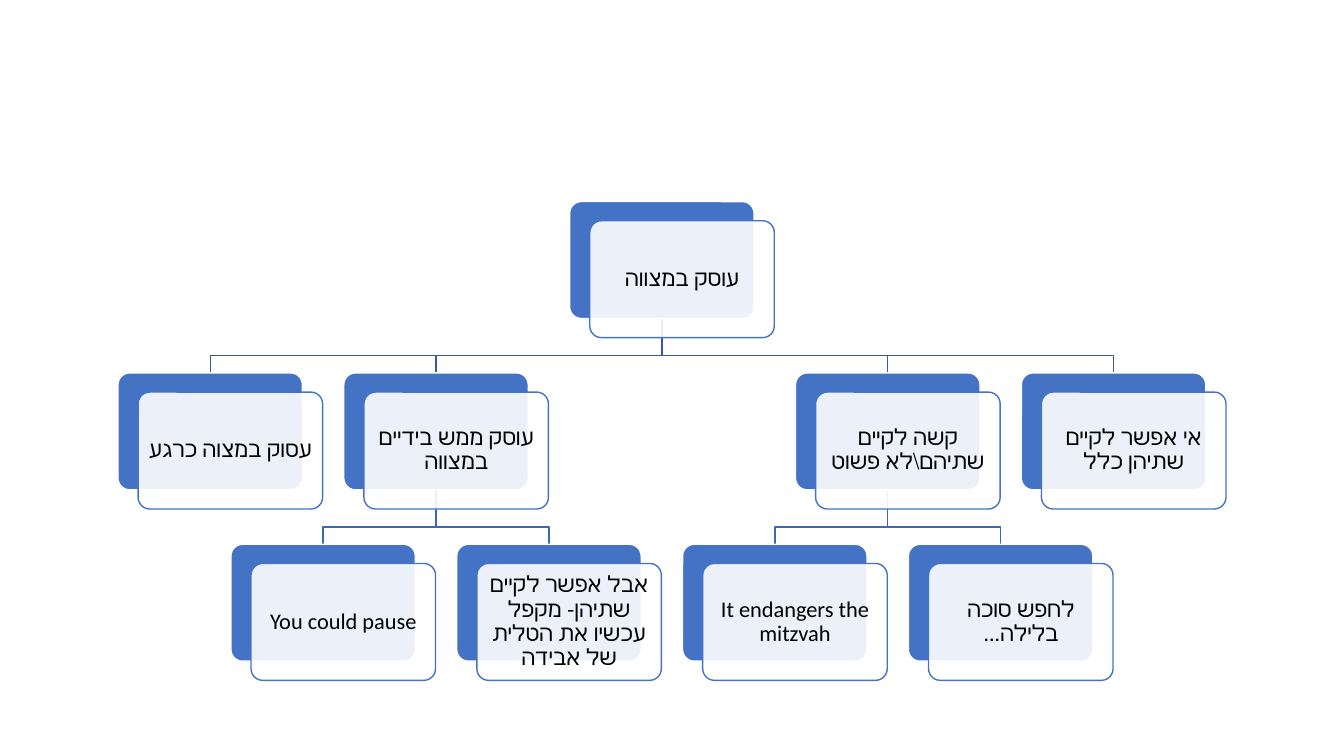
from lxml import etree
from pptx import Presentation
from pptx.dml.color import RGBColor
from pptx.enum.shapes import MSO_SHAPE
from pptx.enum.text import MSO_ANCHOR, PP_ALIGN
from pptx.oxml.ns import qn
from pptx.util import Inches, Pt

ROUNDED = MSO_SHAPE.ROUNDED_RECTANGLE
MIDDLE = MSO_ANCHOR.MIDDLE
CENTER = PP_ALIGN.CENTER

COLORS = {
    "blue": "4472C4",
    "white": "FFFFFF",
    "black": "000000",
    "upper_branch": "365B9D",
    "lower_branch": "3E67B2",
}

CARD_WIDTH, CARD_HEIGHT = 1.83, 1.16
LEFT, TOP = 1.17, 2
COLUMN_STEP, LEVEL_STEP = 1.12, 1.7
FRONT_X, FRONT_Y = 0.2, 0.19
TEXT_MARGIN = 0.03
BRANCH_DROP = 0.37

NODES = {
    "engaged": (4, 0, "עוסק במצווה"),
    "impossible": (8, 1, "אי אפשר לקיים שתיהן כלל"),
    "difficult": (6, 1, "קשה לקיים שתיהם\\לא פשוט"),
    "search": (7, 2, "לחפש סוכה בלילה..."),
    "endangers": (5, 2, "It endangers the mitzvah"),
    "hands": (2, 1, "עוסק ממש בידיים במצווה"),
    "both": (3, 2, "אבל אפשר לקיים שתיהן- מקפל עכשיו את הטלית של אבידה"),
    "pause": (1, 2, "You could pause"),
    "now": (0, 1, "עסוק במצוה כרגע"),
}

CHILDREN = {
    "engaged": ("now", "hands", "difficult", "impossible"),
    "hands": ("pause", "both"),
    "difficult": ("endangers", "search"),
}


class TreeSlide:
    frame_format = {
        "word_wrap": True,
        "vertical_anchor": MIDDLE,
        "margin_left": Inches(0.07),
        "margin_right": Inches(0.07),
        "margin_top": Inches(0.07),
        "margin_bottom": Inches(0.07),
    }
    paragraph_format = {"alignment": CENTER, "line_spacing": 0.9}
    font_format = {"name": "Calibri", "size": Pt(16)}

    def __init__(self, slide):
        self.slide = slide

    def color(self, name):
        return RGBColor.from_string(COLORS[name])

    def apply(self, target, values):
        for name, value in values.items():
            setattr(target, name, value)

    def outline(self, shape, color):
        shape.shadow.inherit = False
        shape.line.color.rgb = self.color(color)
        shape.line.width = Pt(1)

    def position(self, name):
        column, level, _ = NODES[name]
        return LEFT + column * COLUMN_STEP, TOP + level * LEVEL_STEP

    def branch(self, parent, child):
        parent_left, parent_top = self.position(parent)
        child_left, child_top = self.position(child)
        start_x = Inches(parent_left + CARD_WIDTH / 2)
        end_x = Inches(child_left + CARD_WIDTH / 2)
        start_y = parent_top + CARD_HEIGHT
        turn_y = Inches(start_y + BRANCH_DROP)
        builder = self.slide.shapes.build_freeform(start_x, Inches(start_y))
        builder.add_line_segments(
            [(start_x, turn_y), (end_x, turn_y), (end_x, Inches(child_top))],
            close=False,
        )
        shape = builder.convert_to_shape()
        shape.fill.background()
        level = NODES[parent][1]
        self.outline(shape, "lower_branch" if level else "upper_branch")

    def card(self, left, top, fill, line, opacity=100):
        shape = self.slide.shapes.add_shape(
            ROUNDED, Inches(left), Inches(top), Inches(CARD_WIDTH), Inches(CARD_HEIGHT)
        )
        shape.adjustments[0] = 0.1
        shape.fill.solid()
        shape.fill.fore_color.rgb = self.color(fill)
        if opacity < 100:
            fill_color = shape.fill._xPr.find(qn("a:solidFill"))[0]
            etree.SubElement(fill_color, qn("a:alpha"), val=str(opacity * 1000))
        self.outline(shape, line)

    def label(self, left, top, text):
        box = self.slide.shapes.add_textbox(
            Inches(left + TEXT_MARGIN),
            Inches(top + TEXT_MARGIN),
            Inches(CARD_WIDTH - 2 * TEXT_MARGIN),
            Inches(CARD_HEIGHT - 2 * TEXT_MARGIN),
        )
        self.apply(box.text_frame, self.frame_format)
        paragraph = box.text_frame.paragraphs[0]
        self.apply(paragraph, self.paragraph_format)
        paragraph._p.get_or_add_pPr().set("rtl", "1")
        run = paragraph.add_run()
        run.text = text
        self.apply(run.font, self.font_format)
        run.font.color.rgb = self.color("black")

    def node(self, name):
        left, top = self.position(name)
        front_left, front_top = left + FRONT_X, top + FRONT_Y
        self.card(left, top, "blue", "white")
        self.card(front_left, front_top, "white", "blue", opacity=90)
        self.label(front_left, front_top, NODES[name][2])


def main():
    presentation = Presentation()
    presentation.slide_width = Inches(13.33)
    presentation.slide_height = Inches(7.5)
    tree = TreeSlide(presentation.slides.add_slide(presentation.slide_layouts[6]))
    for parent, children in CHILDREN.items():
        for child in children:
            tree.branch(parent, child)
    for name in NODES:
        tree.node(name)
    presentation.save("out.pptx")


if __name__ == "__main__":
    main()
